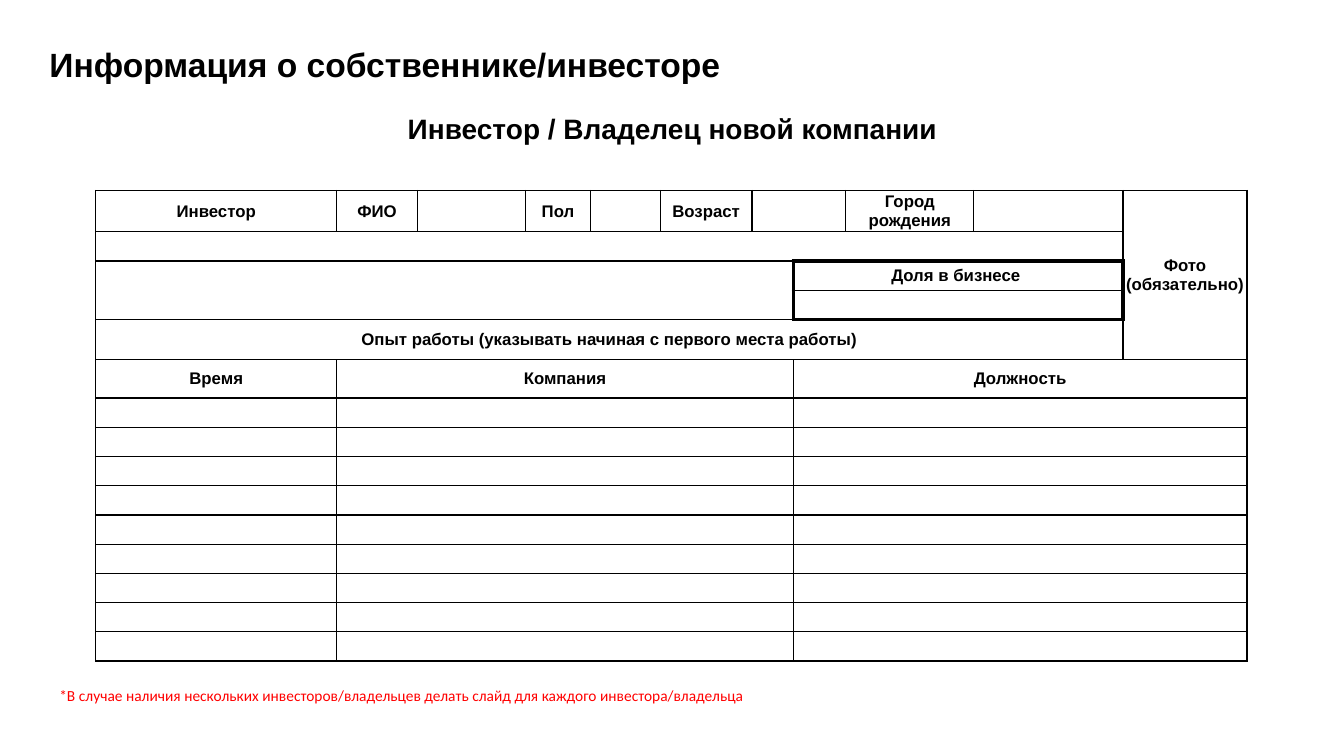
from dataclasses import dataclass

from lxml.etree import SubElement
from pptx import Presentation
from pptx.dml.color import RGBColor
from pptx.enum.text import MSO_ANCHOR, MSO_AUTO_SIZE, PP_ALIGN
from pptx.oxml.ns import qn
from pptx.shapes.autoshape import Shape
from pptx.slide import Slide
from pptx.table import Table, _Cell
from pptx.util import Inches, Pt

BLACK = RGBColor(0, 0, 0)
RED = RGBColor(255, 0, 0)
THIN, THICK = 1, 3
SIDES = "LRTB"

COLS = [2.39, 0.8, 1.07, 0.65, 0.69, 0.91, 0.41, 0.52, 1.27, 1.48, 1.23]
JOBS = 9
ROWS = [0.41, 0.29, 0.29, 0.29, 0.4, 0.38] + [0.29] * JOBS


@dataclass(frozen=True)
class Style:
    size: int
    font: str = "Arial"
    color: RGBColor = BLACK
    bold: bool = True
    align: PP_ALIGN = PP_ALIGN.CENTER


@dataclass(frozen=True)
class Area:
    """A block of table cells; thick lists the sides with a heavy border."""
    row: int
    col: int
    text: str = ""
    high: int = 1
    wide: int = 1
    thick: str = ""


@dataclass(frozen=True)
class Label:
    text: str
    left: float
    top: float
    width: float
    height: float
    style: Style
    anchor: MSO_ANCHOR = MSO_ANCHOR.TOP


TITLE = Label("Информация о собственнике/инвесторе", 0.39, 0.39, 11.5, 0.79,
              Style(24, align=PP_ALIGN.LEFT))
LABELS = [
    Label("Инвестор / Владелец новой компании", 0.49, 1.05, 12.36, 0.44,
          Style(20), MSO_ANCHOR.MIDDLE),
    Label("*В случае наличия нескольких инвесторов/владельцев делать слайд "
          "для каждого инвестора/владельца", 0.49, 6.76, 12.48, 0.29,
          Style(11, "Calibri", RED, False, PP_ALIGN.LEFT)),
]
CELL = Style(12)


def job(row: int, time: str = "", firm: str = "", post: str = "") -> list[Area]:
    return [Area(row, 0, time), Area(row, 1, firm, wide=6),
            Area(row, 7, post, wide=4)]


AREAS = [
    Area(0, 0, "Инвестор"), Area(0, 1, "ФИО"), Area(0, 2),
    Area(0, 3, "Пол"), Area(0, 4), Area(0, 5, "Возраст"),
    Area(0, 6, wide=2), Area(0, 8, "Город рождения"), Area(0, 9),
    Area(0, 10, "Фото\n(обязательно)", high=5),
    Area(1, 0, wide=10),
    Area(2, 0, high=2, wide=7, thick="R"),
    Area(2, 7, "Доля в бизнесе ", wide=3, thick="LRT"),
    Area(3, 7, wide=3, thick="LRB"),
    Area(4, 0, "Опыт работы (указывать начиная с первого места работы)", wide=10),
    *job(5, "Время", "Компания", "Должность"),
]
for line in range(JOBS):
    AREAS += job(6 + line)


def write(frame, text: str, style: Style) -> None:
    frame.text = text
    for para in frame.paragraphs:
        para.alignment = style.align
        for run in para.runs:
            font = run.font
            font.name, font.size, font.bold = style.font, Pt(style.size), style.bold
            font.color.rgb = style.color
        if not para.runs:
            SubElement(para._p, qn("a:endParaRPr"), sz=str(style.size * 100))


def place(shape: Shape, label: Label) -> None:
    shape.left, shape.top = Inches(label.left), Inches(label.top)
    shape.width, shape.height = Inches(label.width), Inches(label.height)
    frame = shape.text_frame
    frame.word_wrap = True
    frame.vertical_anchor = label.anchor
    write(frame, label.text, label.style)


def border(cell: _Cell, thick: str) -> None:
    props = cell._tc.get_or_add_tcPr()
    for side in SIDES:
        width = THICK if side in thick else THIN
        edge = SubElement(props, qn(f"a:ln{side}"), w=str(Pt(width)))
        fill = SubElement(edge, qn("a:solidFill"))
        SubElement(fill, qn("a:srgbClr"), val=str(BLACK))


def fill_area(table: Table, area: Area) -> None:
    last_row, last_col = area.row + area.high - 1, area.col + area.wide - 1
    first = table.cell(area.row, area.col)
    if area.high * area.wide > 1:
        first.merge(table.cell(last_row, last_col))
    for row in range(area.row, last_row + 1):
        for col in range(area.col, last_col + 1):
            cell = table.cell(row, col)
            cell.margin_left = cell.margin_right = 0
            cell.margin_top = cell.margin_bottom = 0
            cell.vertical_anchor = MSO_ANCHOR.MIDDLE
            border(cell, area.thick)
            cell.fill.background()
            write(cell.text_frame, "" if cell.is_spanned else area.text, CELL)


def add_form(slide: Slide) -> None:
    frame = slide.shapes.add_table(
        len(ROWS), len(COLS), Inches(0.95), Inches(1.89),
        Inches(sum(COLS)), Inches(sum(ROWS)))
    table = frame.table
    table.first_row = table.horz_banding = False
    for col, width in zip(table.columns, COLS):
        col.width = Inches(width)
    for row, height in zip(table.rows, ROWS):
        row.height = Inches(height)
    for area in AREAS:
        fill_area(table, area)


def main() -> None:
    deck = Presentation()
    deck.slide_width, deck.slide_height = Inches(13.33), Inches(7.5)
    slide = deck.slides.add_slide(deck.slide_layouts.get_by_name("Title Only"))
    place(slide.shapes.title, TITLE)
    add_form(slide)
    for label in LABELS:
        box = slide.shapes.add_textbox(0, 0, 0, 0)
        place(box, label)
        box.text_frame.auto_size = MSO_AUTO_SIZE.SHAPE_TO_FIT_TEXT
    deck.save("out.pptx")


if __name__ == "__main__":
    main()
